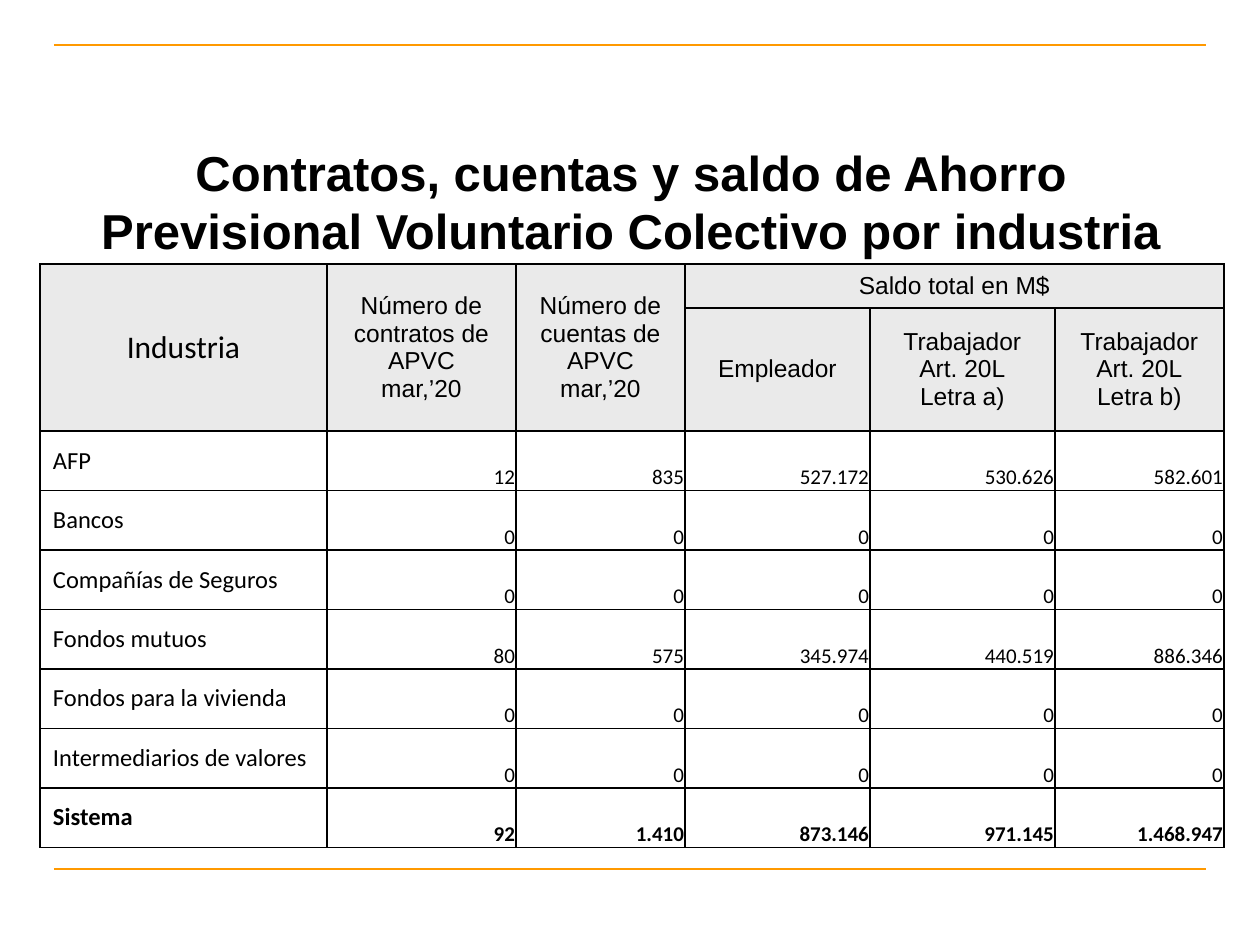
from lxml import etree
from pptx import Presentation
from pptx.dml.color import RGBColor
from pptx.enum.shapes import MSO_CONNECTOR
from pptx.enum.text import MSO_ANCHOR, PP_ALIGN
from pptx.oxml.ns import qn
from pptx.util import Emu, Pt

LEFT, CENTER, RIGHT = PP_ALIGN.LEFT, PP_ALIGN.CENTER, PP_ALIGN.RIGHT
MIDDLE, BOTTOM = MSO_ANCHOR.MIDDLE, MSO_ANCHOR.BOTTOM
STRAIGHT = MSO_CONNECTOR.STRAIGHT

PX_PER_INCH = 126
BLACK, WHITE, GRAY, ORANGE = "000000", "FFFFFF", "EAEAEA", "FF9900"
HEADER_MARGINS = (13, 2, 13, 2)
LABEL_MARGINS = (13, 6, 13, 6)
NUMBER_MARGINS = (1, 1, 1, 0)

COLUMN_WIDTHS = [287, 189, 169, 185, 185, 169]
HEADER_HEIGHTS = [44, 123]
BODY_HEIGHT = 59.5

HEADERS = [
    (0, 1, 1, 1, "Número de contratos de APVC\nmar,’20"),
    (0, 2, 1, 2, "Número de cuentas de APVC\nmar,’20"),
    (0, 3, 0, 5, "Saldo total en M$"),
    (1, 3, 1, 3, "Empleador"),
    (1, 4, 1, 4, "Trabajador\nArt. 20L\nLetra a)"),
    (1, 5, 1, 5, "Trabajador\nArt. 20L\nLetra b)"),
]
ZEROS = ["0"] * 5
INDUSTRIES = [
    ("AFP", ["12", "835", "527.172", "530.626", "582.601"]),
    ("Bancos", ZEROS),
    ("Compañías de Seguros", ZEROS),
    ("Fondos mutuos", ["80", "575", "345.974", "440.519", "886.346"]),
    ("Fondos para la vivienda", ZEROS),
    ("Intermediarios de valores", ZEROS),
    ("Sistema", ["92", "1.410", "873.146", "971.145", "1.468.947"]),
]


def px(value):
    return Emu(round(value * 914400 / PX_PER_INCH))


def color(value):
    return RGBColor.from_string(value)


def style_font(paragraph, name, size, bold=False):
    font = paragraph.font
    font.name = name
    font.size = Pt(size)
    font.bold = bold
    font.color.rgb = color(BLACK)


def add_rule(slide, y):
    rule = slide.shapes.add_connector(STRAIGHT, px(54), px(y), px(1206), px(y))
    rule.line.color.rgb = color(ORANGE)
    rule.line.width = Pt(0.75)
    etree.SubElement(rule._element.spPr, qn("a:effectLst"))


def add_title(slide, text):
    box = slide.shapes.add_textbox(px(64), px(138), px(1134), px(126))
    frame = box.text_frame
    frame.word_wrap = True
    frame.vertical_anchor = MIDDLE
    frame.margin_top = frame.margin_bottom = 0
    paragraph = frame.paragraphs[0]
    paragraph.text = text
    paragraph.alignment = CENTER
    style_font(paragraph, "Arial", 28, True)


def set_borders(cell):
    properties = cell._tc.get_or_add_tcPr()
    for index, side in enumerate(("a:lnL", "a:lnR", "a:lnT", "a:lnB")):
        line = etree.Element(qn(side), w=str(Pt(1)))
        fill = etree.SubElement(line, qn("a:solidFill"))
        etree.SubElement(fill, qn("a:srgbClr"), val=BLACK)
        properties.insert(index, line)


def write_cell(cell, text, name, size, alignment, anchor, margins, bold=False):
    cell.vertical_anchor = anchor
    (cell.margin_left, cell.margin_top,
     cell.margin_right, cell.margin_bottom) = map(px, margins)
    cell.text_frame.text = text
    for paragraph in cell.text_frame.paragraphs:
        paragraph.alignment = alignment
        style_font(paragraph, name, size, bold)


def write_header(table, top, left, bottom, right, text, name="Arial", size=14):
    cell = table.cell(top, left)
    if (top, left) != (bottom, right):
        cell.merge(table.cell(bottom, right))
    write_cell(cell, text, name, size, CENTER, MIDDLE, HEADER_MARGINS)


def add_savings_table(slide):
    heights = HEADER_HEIGHTS + [BODY_HEIGHT] * len(INDUSTRIES)
    table = slide.shapes.add_table(
        len(heights), len(COLUMN_WIDTHS), px(40), px(264),
        px(sum(COLUMN_WIDTHS)), px(sum(heights))).table
    table.first_row = False
    table.horz_banding = False
    for column, width in zip(table.columns, COLUMN_WIDTHS):
        column.width = px(width)
    for index, (row, height) in enumerate(zip(table.rows, heights)):
        row.height = px(height)
        for cell in row.cells:
            cell.fill.solid()
            is_header = index < len(HEADER_HEIGHTS)
            cell.fill.fore_color.rgb = color(GRAY if is_header else WHITE)
            set_borders(cell)

    write_header(table, 0, 0, 1, 0, "Industria", "Calibri", 18)
    for header in HEADERS:
        write_header(table, *header)
    for row, (industry, values) in enumerate(INDUSTRIES, len(HEADER_HEIGHTS)):
        bold = industry == "Sistema"
        write_cell(table.cell(row, 0), industry, "Calibri", 14,
                   LEFT, MIDDLE, LABEL_MARGINS, bold)
        for column, value in enumerate(values, 1):
            write_cell(table.cell(row, column), value, "Calibri", 12,
                       RIGHT, BOTTOM, NUMBER_MARGINS, bold)


def main():
    presentation = Presentation()
    presentation.slide_width = px(1260)
    presentation.slide_height = px(945)
    slide = presentation.slides.add_slide(presentation.slide_layouts[6])
    for y in (45, 869):
        add_rule(slide, y)
    add_title(slide, "Contratos, cuentas y saldo de Ahorro "
                     "Previsional Voluntario Colectivo por industria")
    add_savings_table(slide)
    presentation.save("out.pptx")


if __name__ == "__main__":
    main()
